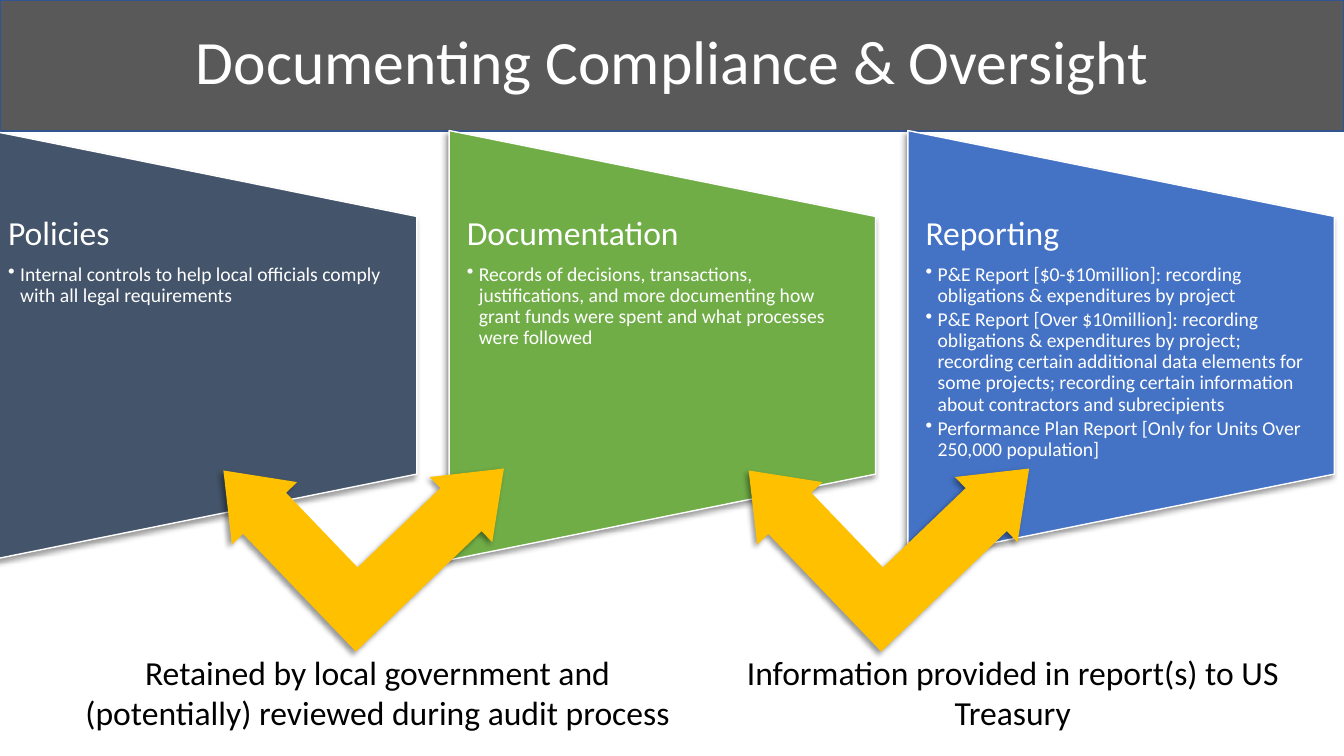
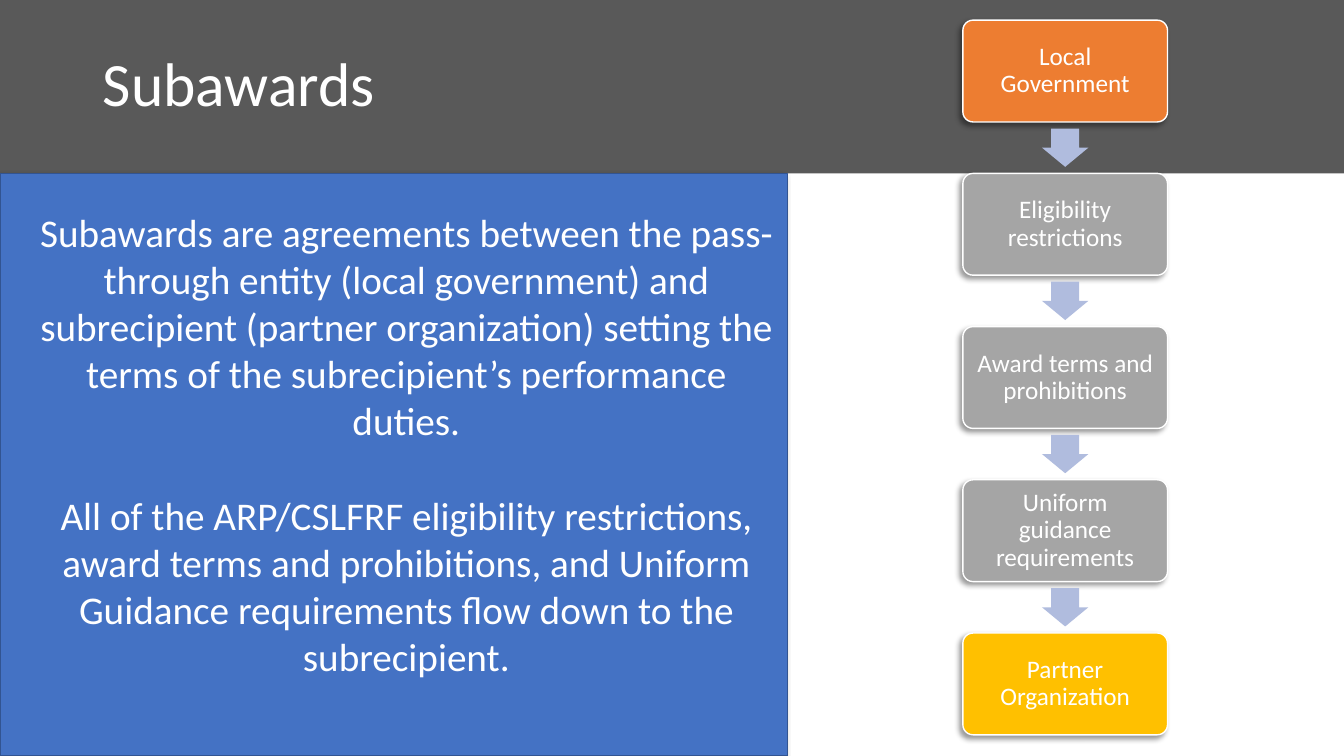
from dataclasses import dataclass

from lxml.etree import SubElement
from pptx import Presentation
from pptx.dml.color import RGBColor
from pptx.enum.shapes import MSO_SHAPE
from pptx.enum.text import MSO_ANCHOR, MSO_AUTO_SIZE, PP_ALIGN
from pptx.oxml.ns import qn
from pptx.util import Inches, Pt


@dataclass(frozen=True)
class Theme:
    font: str = "Calibri"
    white: str = "FFFFFF"
    black: str = "000000"
    band: str = "595959"
    edge: str = "325491"
    slate: str = "44546A"
    green: str = "70AD47"
    blue: str = "4472C4"
    orange: str = "ED7D31"
    gray: str = "A5A5A5"
    gold: str = "FFC000"
    pale: str = "B0BCDE"
    title: int = 44
    statement: int = 28
    heading: int = 24
    step: int = 18
    detail: int = 14


THEME = Theme()

# Content
CARDS = [
    ("Policies", THEME.slate, [
        "Internal controls to help local officials comply with all legal requirements",
    ]),
    ("Documentation", THEME.green, [
        "Records of decisions, transactions, justifications, and more documenting how "
        "grant funds were spent and what processes were followed",
    ]),
    ("Reporting", THEME.blue, [
        "P&E Report [$0-$10million]: recording obligations & expenditures by project",
        "P&E Report [Over $10million]: recording obligations & expenditures by project; "
        "recording certain additional data elements for some projects; recording certain "
        "information about contractors and subrecipients",
        "Performance Plan Report [Only for Units Over 250,000 population]",
    ]),
]
# Arrow left, caption left, caption
CAPTIONS = [
    (2.42, 0.66, "Retained by local government and (potentially) reviewed during audit process"),
    (7.63, 6.96, "Information provided in report(s) to US Treasury"),
]
STATEMENTS = [
    "Subawards are agreements between the pass-through entity (local government) and "
    "subrecipient (partner organization) setting the terms of the subrecipient’s "
    "performance duties.",
    "All of the ARP/CSLFRF eligibility restrictions, award terms and prohibitions, and "
    "Uniform Guidance requirements flow down to the subrecipient.",
]
STEPS = [
    ("Local Government", THEME.orange),
    ("Eligibility restrictions", THEME.gray),
    ("Award terms and prohibitions", THEME.gray),
    ("Uniform guidance requirements", THEME.gray),
    ("Partner Organization", THEME.gold),
]


# Shared helpers
def inches(values):
    return [Inches(value) for value in values]


def set_frame(frame, anchor=MSO_ANCHOR.MIDDLE, insets=(0.1, 0.05, 0.1, 0.05)):
    frame.word_wrap = True
    frame.auto_size = MSO_AUTO_SIZE.NONE
    frame.vertical_anchor = anchor
    (frame.margin_left, frame.margin_top,
     frame.margin_right, frame.margin_bottom) = inches(insets)


def add_text(frame, text, size, color=THEME.white, align=PP_ALIGN.CENTER, spacing=1.0,
             before=0, after=0, indent=0, bullet=False):
    """Write text as the next paragraph of the frame."""
    para = frame.paragraphs[0]
    if para.runs:
        para = frame.add_paragraph()
    para.alignment = align
    para.line_spacing = spacing
    para.space_before = Pt(before)
    para.space_after = Pt(after)
    properties = para._p.get_or_add_pPr()
    if indent:
        properties.set("marL", str(Inches(indent)))
    if bullet:
        properties.set("indent", str(-Inches(indent)))
        SubElement(properties, qn("a:buChar")).set("char", "•")
    span = para.add_run()
    span.text = text
    span.font.name = THEME.font
    span.font.size = Pt(size)
    span.font.color.rgb = RGBColor.from_string(color)


def add_box(page, kind, place, fill, line=None, shadow=False, rotation=0, adjust=()):
    box = page.shapes.add_shape(kind, *inches(place))
    box.rotation = rotation
    for index, value in enumerate(adjust):
        box.adjustments[index] = value
    box.fill.solid()
    box.fill.fore_color.rgb = RGBColor.from_string(fill)
    if line:
        box.line.color.rgb = RGBColor.from_string(line)
        box.line.width = Pt(1)
    else:
        box.line.fill.background()
    box.shadow.inherit = False
    if shadow:
        effects = box._element.spPr.find(qn("a:effectLst"))
        outer = SubElement(effects, qn("a:outerShdw"), blurRad=str(Pt(4)), dist=str(Pt(3)),
                           dir=str(135 * 60000), rotWithShape="0")
        color = SubElement(outer, qn("a:srgbClr"), val=THEME.black)
        SubElement(color, qn("a:alpha"), val="40000")
    return box


def add_text_box(page, place, **frame_format):
    frame = page.shapes.add_textbox(*inches(place)).text_frame
    set_frame(frame, **frame_format)
    return frame


def add_page(deck, title, band_height, title_top, align, line=None):
    """Add a title-only slide with its dark band behind the title."""
    page = deck.slides.add_slide(deck.slide_layouts[5])
    add_box(page, MSO_SHAPE.RECTANGLE, (0, 0, 13.33, band_height), THEME.band, line)
    holder = page.shapes.title
    holder.left, holder.top, holder.width, holder.height = inches((0.92, title_top, 11.5, 1.45))
    set_frame(holder.text_frame)
    add_text(holder.text_frame, title, THEME.title, align=align, spacing=0.9)
    page.shapes._spTree.append(holder._element)
    return page


# Slide 1: three cards, two double arrows with captions
def build_compliance(deck):
    page = add_page(deck, "Documenting Compliance & Oversight", 1.3, -0.08,
                    PP_ALIGN.CENTER, THEME.edge)
    for index, (heading, color, details) in enumerate(CARDS):
        left = -0.11 + 4.55 * index
        add_box(page, MSO_SHAPE.FLOWCHART_MANUAL_OPERATION, (left, 1.31, 4.26, 4.23), color,
                THEME.white, shadow=True, rotation=270)
        frame = add_text_box(page, (left + 0.02, 2.15, 4.23, 2.56),
                             anchor=MSO_ANCHOR.TOP, insets=(0.17, 0, 0.17, 0))
        add_text(frame, heading, THEME.heading, align=PP_ALIGN.LEFT, spacing=0.9, after=8)
        for detail in details:
            add_text(frame, detail, THEME.detail, align=PP_ALIGN.LEFT, spacing=0.9,
                     after=2, indent=0.12, bullet=True)
    for arrow_left, caption_left, caption in CAPTIONS:
        add_box(page, MSO_SHAPE.LEFT_UP_ARROW, (arrow_left, 3.74, 2.36, 2.47), THEME.gold,
                shadow=True, rotation=46.2, adjust=(0.25, 0.19, 0.25))
        frame = add_text_box(page, (caption_left, 6.39, 6.17, 0.95))
        add_text(frame, caption, THEME.heading, THEME.black)


# Slide 2: flow of steps beside a statement panel
def build_subawards(deck):
    page = add_page(deck, "Subawards", 1.72, 0.13, PP_ALIGN.LEFT)
    left, top, width, height, pitch = 9.55, 0.2, 2.03, 1.01, 1.52
    arrow_width, arrow_height = 0.46, 0.38
    for index, (label, color) in enumerate(STEPS):
        step_top = top + pitch * index
        if index:
            arrow_top = step_top - (pitch - height + arrow_height) / 2
            add_box(page, MSO_SHAPE.DOWN_ARROW,
                    (left + (width - arrow_width) / 2, arrow_top, arrow_width, arrow_height),
                    THEME.pale, adjust=(0.6, 0.5))
        step = add_box(page, MSO_SHAPE.ROUNDED_RECTANGLE, (left, step_top, width, height),
                       color, THEME.white, shadow=True, adjust=(0.1,))
        set_frame(step.text_frame, insets=(0.09, 0.09, 0.09, 0.09))
        add_text(step.text_frame, label, THEME.step, spacing=0.9)

    panel = add_box(page, MSO_SHAPE.RECTANGLE, (0, 1.72, 7.81, 5.78), THEME.blue,
                    THEME.edge, shadow=True)
    set_frame(panel.text_frame, insets=(0.1, 0.05, 0.1, 0.46))
    for index, statement in enumerate(STATEMENTS):
        add_text(panel.text_frame, statement, THEME.statement, indent=0.25,
                 before=34 * index)


def main():
    deck = Presentation()
    deck.slide_width, deck.slide_height = inches((13.33, 7.5))
    build_compliance(deck)
    build_subawards(deck)
    deck.save("out.pptx")


if __name__ == "__main__":
    main()
